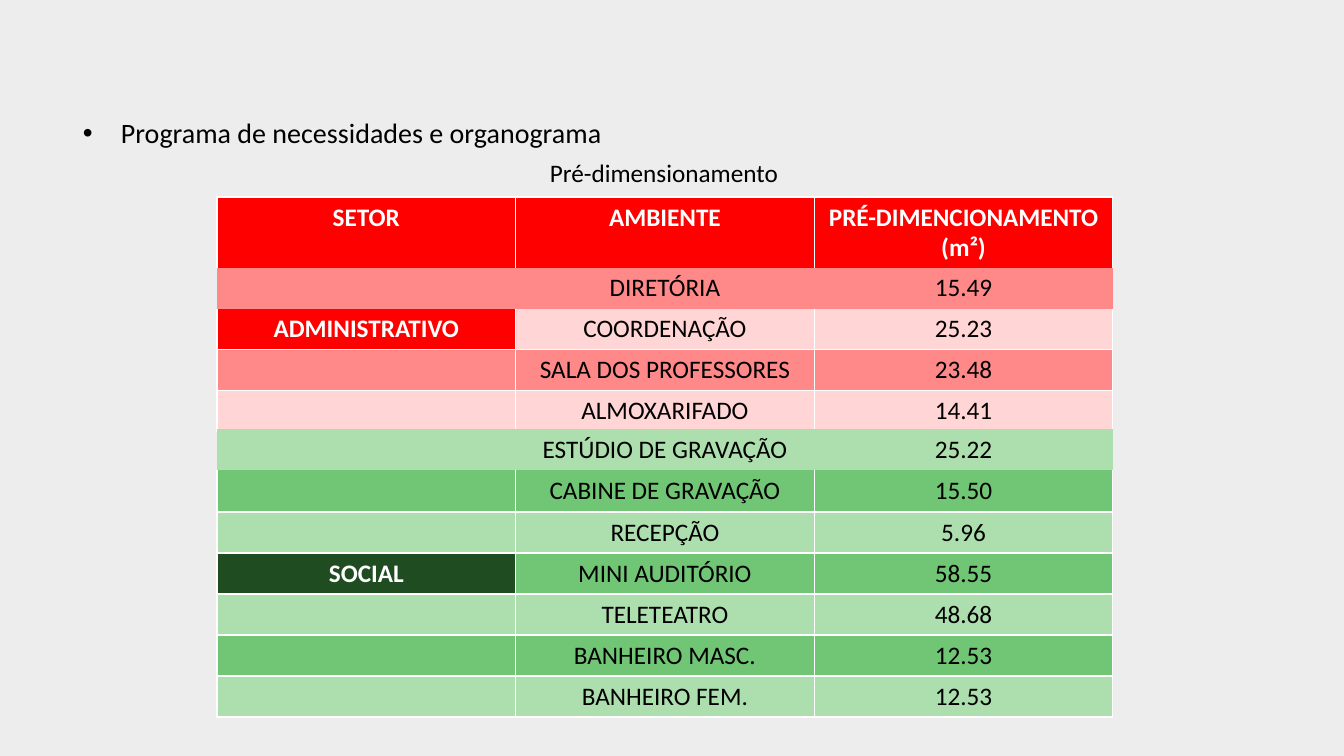
from lxml import etree
from pptx import Presentation
from pptx import util as u
from pptx.dml.color import RGBColor
from pptx.enum import text as t
from pptx.oxml import ns

PX = 914400 / 100.8
BACKGROUND = RGBColor(0xED, 0xED, 0xED)
BLACK = RGBColor(0x00, 0x00, 0x00)
WHITE = RGBColor(0xFF, 0xFF, 0xFF)
RED = RGBColor(0xFF, 0x00, 0x00)
MID_RED = RGBColor(0xFF, 0x89, 0x89)
PALE_RED = RGBColor(0xFF, 0xD5, 0xD5)
DARK_GREEN = RGBColor(0x1F, 0x4D, 0x21)
MID_GREEN = RGBColor(0x70, 0xC6, 0x74)
PALE_GREEN = RGBColor(0xAC, 0xDE, 0xAE)


def px(value):
    return u.Emu(round(value * PX))


def write(frame, wording, size=18, color=BLACK, bold=False, align=t.PP_ALIGN.CENTER):
    frame.word_wrap = True
    paragraph = frame.paragraphs[0]
    paragraph.alignment = align
    run = paragraph.add_run()
    run.text = wording
    run.font.name = "Calibri"
    run.font.size = u.Pt(size)
    run.font.bold = bold
    run.font.color.rgb = color
    return paragraph


presentation = Presentation()
presentation.slide_width, presentation.slide_height = px(1344), px(756)
slide = presentation.slides.add_slide(presentation.slide_layouts[6])
slide.background.fill.solid()
slide.background.fill.fore_color.rgb = BACKGROUND

# Bulleted heading
heading = slide.shapes.add_textbox(px(73), px(111), px(555), px(44))
paragraph = write(heading.text_frame, "Programa de necessidades e organograma",
                  size=20, align=t.PP_ALIGN.LEFT)
properties = paragraph._p.get_or_add_pPr()
properties.set("marL", str(px(38)))
properties.set("indent", str(px(-38)))
etree.SubElement(properties, ns.qn("a:buFont")).set("typeface", "Arial")
etree.SubElement(properties, ns.qn("a:buChar")).set("char", "•")

# Table caption
caption = slide.shapes.add_textbox(px(422), px(152), px(484), px(40))
write(caption.text_frame, "Pré-dimensionamento")
for box in (heading, caption):
    box.text_frame.auto_size = t.MSO_AUTO_SIZE.SHAPE_TO_FIT_TEXT

# Each row: sector, room, area, height, fill, sides with a white border
administrative_rows = [
    ("SETOR", "AMBIENTE", "PRÉ-DIMENCIONAMENTO (m²)", 70, RED, "LRT"),
    ("", "DIRETÓRIA", "15.49", 41, MID_RED, ""),
    ("ADMINISTRATIVO", "COORDENAÇÃO", "25.23", 41, PALE_RED, "LRB"),
    ("", "SALA DOS PROFESSORES", "23.48", 41, MID_RED, "LRTB"),
    ("", "ALMOXARIFADO", "14.41", 41, PALE_RED, "LRTB"),
]
social_rows = [
    ("", "ESTÚDIO DE GRAVAÇÃO", "25.22", 41, PALE_GREEN, ""),
    ("", "CABINE DE GRAVAÇÃO", "15.50", 42, MID_GREEN, "LRB"),
    ("", "RECEPÇÃO", "5.96", 41, PALE_GREEN, "LRTB"),
    ("SOCIAL", "MINI AUDITÓRIO", "58.55", 41, MID_GREEN, "LRTB"),
    ("", "TELETEATRO", "48.68", 41, PALE_GREEN, "LRTB"),
    ("", "BANHEIRO MASC.", "12.53", 41, MID_GREEN, "LRTB"),
    ("", "BANHEIRO FEM.", "12.53", 41, PALE_GREEN, "LRTB"),
]

# One table per sector, stacked
for top, rows, sector_fill in ((197, administrative_rows, RED),
                               (429, social_rows, DARK_GREEN)):
    height = sum(row[3] for row in rows)
    table = slide.shapes.add_table(len(rows), 3, px(217), px(top), px(896), px(height)).table
    table.first_row = table.horz_banding = False
    for column in table.columns:
        column.width = px(896 / 3)
    for row_index, (sector, room, area, row_height, fill, sides) in enumerate(rows):
        table.rows[row_index].height = px(row_height)
        for column_index, wording in enumerate((sector, room, area)):
            cell = table.cell(row_index, column_index)
            strong = fill == RED or (column_index == 0 and sector != "")
            for side in "LRTB":
                line = etree.SubElement(cell._tc.get_or_add_tcPr(), ns.qn(f"a:ln{side}"))
                line.set("w", str(u.Pt(1)))
                if side in sides:
                    paint = etree.SubElement(line, ns.qn("a:solidFill"))
                    etree.SubElement(paint, ns.qn("a:srgbClr")).set("val", str(WHITE))
                else:
                    etree.SubElement(line, ns.qn("a:noFill"))
            cell.fill.solid()
            cell.fill.fore_color.rgb = sector_fill if strong else fill
            if wording:
                write(cell.text_frame, wording, color=WHITE if strong else BLACK, bold=strong)

presentation.save("out.pptx")
